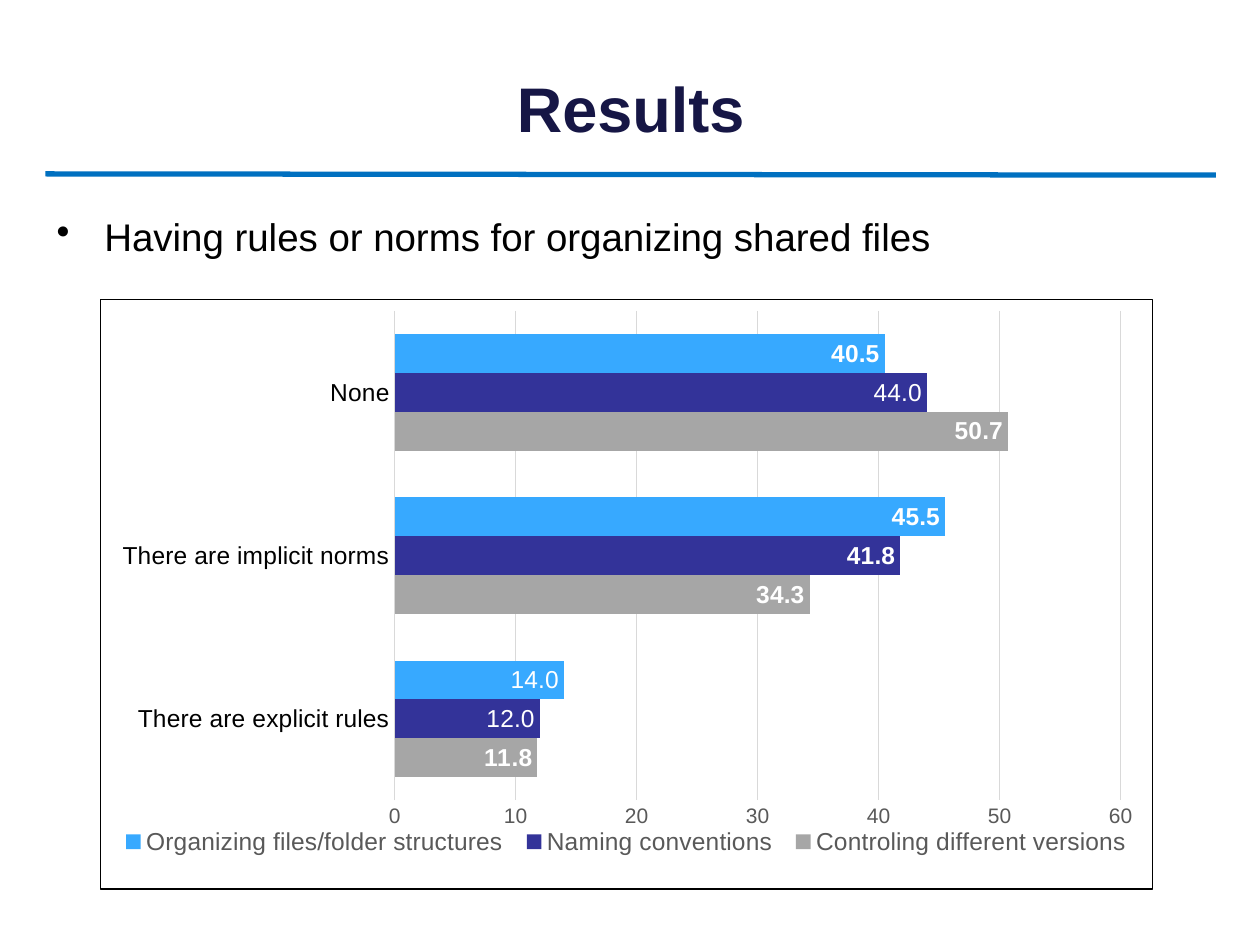
"""Build the results slide with a clustered bar chart of file-sharing rules."""
import pptx
import pptx.chart.data
import pptx.dml.color
import pptx.enum.chart
import pptx.enum.shapes
import pptx.enum.text
import pptx.oxml
import pptx.oxml.ns
import pptx.util
from pptx.util import Inches, Pt

RGBColor = pptx.dml.color.RGBColor
BLACK = RGBColor(0x00, 0x00, 0x00)
WHITE = RGBColor(0xFF, 0xFF, 0xFF)
NAVY = RGBColor(0x16, 0x16, 0x45)
RULE_BLUE = RGBColor(0x00, 0x70, 0xC0)
GRID_GRAY = RGBColor(0xD9, 0xD9, 0xD9)
LABEL_GRAY = RGBColor(0x59, 0x59, 0x59)

TITLE = "Results"
BULLET = "Having rules or norms for organizing shared files"
CATEGORIES = ["There are explicit rules", "There are implicit norms", "None"]
SERIES = [
    ("Controling different versions", (11.8, 34.3, 50.7), RGBColor(0xA6, 0xA6, 0xA6), ()),
    ("Naming conventions", (12, 41.8, 44), RGBColor(0x33, 0x33, 0x99), (0, 2)),
    ("Organizing files/folder structures", (14, 45.5, 40.5), RGBColor(0x37, 0xA9, 0xFF), (0,)),
]
PLOT_LAYOUT = {"x": 0.28, "y": 0.02, "w": 0.69, "h": 0.83}
LEGEND_LAYOUT = {"x": 0.01, "y": 0.89, "w": 0.98, "h": 0.06}


def set_font(font, size, color, bold=False):
    """Apply size, colour and weight in Arial."""
    for name, value in {"name": "Arial", "size": Pt(size), "bold": bold}.items():
        setattr(font, name, value)
    font.color.rgb = color


def set_line(line, color, width):
    """Apply colour and width to a line."""
    line.color.rgb = color
    line.width = Pt(width)


def xml(tag, content=""):
    """Parse one element with the chart and drawing namespaces declared."""
    names = pptx.oxml.ns.nsdecls("a", "c")
    return pptx.oxml.parse_xml(f"<{tag} {names}>{content}</{tag}>")


def layout(places, inner=False):
    """Make a manual chart layout from fractions of the chart area."""
    target = '<c:layoutTarget val="inner"/>' if inner else ""
    modes = "".join(f'<c:{axis}Mode val="edge"/>' for axis in "xy")
    values = "".join(f'<c:{key} val="{value}"/>' for key, value in places.items())
    return xml("c:layout", f"<c:manualLayout>{target}{modes}{values}</c:manualLayout>")


def replace_layout(parent, element, index):
    """Put a layout in place of any existing one."""
    for old in parent.findall(pptx.oxml.ns.qn("c:layout")):
        parent.remove(old)
    parent.insert(index, element)


def add_text(page, place, text, size, color, bold=False):
    """Add a one-paragraph text box and return its frame and paragraph."""
    frame = page.shapes.add_textbox(*map(Inches, place)).text_frame
    frame.word_wrap = True
    para = frame.paragraphs[0]
    span = para.add_run()
    span.text = text
    set_font(span.font, size, color, bold)
    return frame, para


def add_heading(page):
    """Add the title, the rule below it and the bullet."""
    frame, para = add_text(page, (0.36, 0.35, 9.29, 1.01), TITLE, 36, NAVY, True)
    frame.vertical_anchor = pptx.enum.text.MSO_ANCHOR.MIDDLE
    para.alignment = pptx.enum.text.PP_ALIGN.CENTER

    ends = map(Inches, (0.36, 1.38, 9.65, 1.39))
    rule = page.shapes.add_connector(pptx.enum.shapes.MSO_CONNECTOR.STRAIGHT, *ends)
    set_line(rule.line, RULE_BLUE, 3)
    rule._element.spPr.append(xml("a:effectLst"))

    _, para = add_text(page, (0.23, 1.64, 9.55, 0.6), BULLET, 22, BLACK)
    para.space_before = Pt(3.6)
    properties = para._p.get_or_add_pPr()
    properties.set("marL", str(Inches(0.5)))
    properties.set("indent", str(Inches(-0.38)))
    bullet = xml("a:buChar")
    bullet.set("char", "•")
    properties.append(bullet)


def add_bars(page):
    """Add the chart and format its axes, legend, bars and labels."""
    data = pptx.chart.data.CategoryChartData(number_format="0.0")
    data.categories = CATEGORIES
    for name, values, _, _ in SERIES:
        data.add_series(name, values)
    kinds = pptx.enum.chart
    place = map(Inches, (0.79, 2.37, 8.36, 4.69))
    chart = page.shapes.add_chart(kinds.XL_CHART_TYPE.BAR_CLUSTERED, *place, data).chart
    chart.has_title = False
    set_font(chart.font, 10, BLACK)

    for axis, size, color in ((chart.category_axis, 14, BLACK), (chart.value_axis, 12, LABEL_GRAY)):
        axis.major_tick_mark = axis.minor_tick_mark = kinds.XL_TICK_MARK.NONE
        set_font(axis.tick_labels.font, size, color)
    set_line(chart.category_axis.format.line, GRID_GRAY, 0.75)
    scale = chart.value_axis
    for name, value in {"minimum_scale": 0, "maximum_scale": 60, "major_unit": 10}.items():
        setattr(scale, name, value)
    scale.tick_labels.number_format = "0"
    scale.tick_labels.number_format_is_linked = False
    scale.format.line.fill.background()
    set_line(scale.major_gridlines.format.line, GRID_GRAY, 0.75)

    chart.has_legend = True
    chart.legend.position = kinds.XL_LEGEND_POSITION.BOTTOM
    chart.legend.include_in_layout = False
    set_font(chart.legend.font, 14, LABEL_GRAY)

    plot = chart.plots[0]
    plot.gap_width = 120
    plot.overlap = 0
    plot.vary_by_categories = False
    inside_end = kinds.XL_LABEL_POSITION.INSIDE_END
    for series, (_, values, color, plain_points) in zip(plot.series, SERIES):
        series.format.fill.solid()
        series.format.fill.fore_color.rgb = color
        labels = series.data_labels
        labels.show_value = True
        labels.position = inside_end
        labels.number_format = "0.0"
        labels.number_format_is_linked = False
        set_font(labels.font, 14, WHITE, True)
        for index in plain_points:
            label = series.points[index].data_label
            span = label.text_frame.paragraphs[0].add_run()
            span.text = f"{values[index]:.1f}"
            set_font(span.font, 14, WHITE)
            label.position = inside_end

    replace_layout(chart._chartSpace.chart.plotArea, layout(PLOT_LAYOUT, True), 0)
    replace_layout(chart.legend._element, layout(LEGEND_LAYOUT), 1)
    border = f'<a:ln w="{Pt(0.75)}"><a:solidFill><a:srgbClr val="{BLACK}"/></a:solidFill></a:ln>'
    chart._chartSpace.chart.addnext(xml("c:spPr", "<a:noFill/>" + border))


def main():
    """Build and save the deck."""
    deck = pptx.Presentation()
    deck.slide_width, deck.slide_height = Inches(10), Inches(7.5)
    page = deck.slides.add_slide(deck.slide_layouts[6])
    add_heading(page)
    add_bars(page)
    deck.save("out.pptx")


if __name__ == "__main__":
    main()
